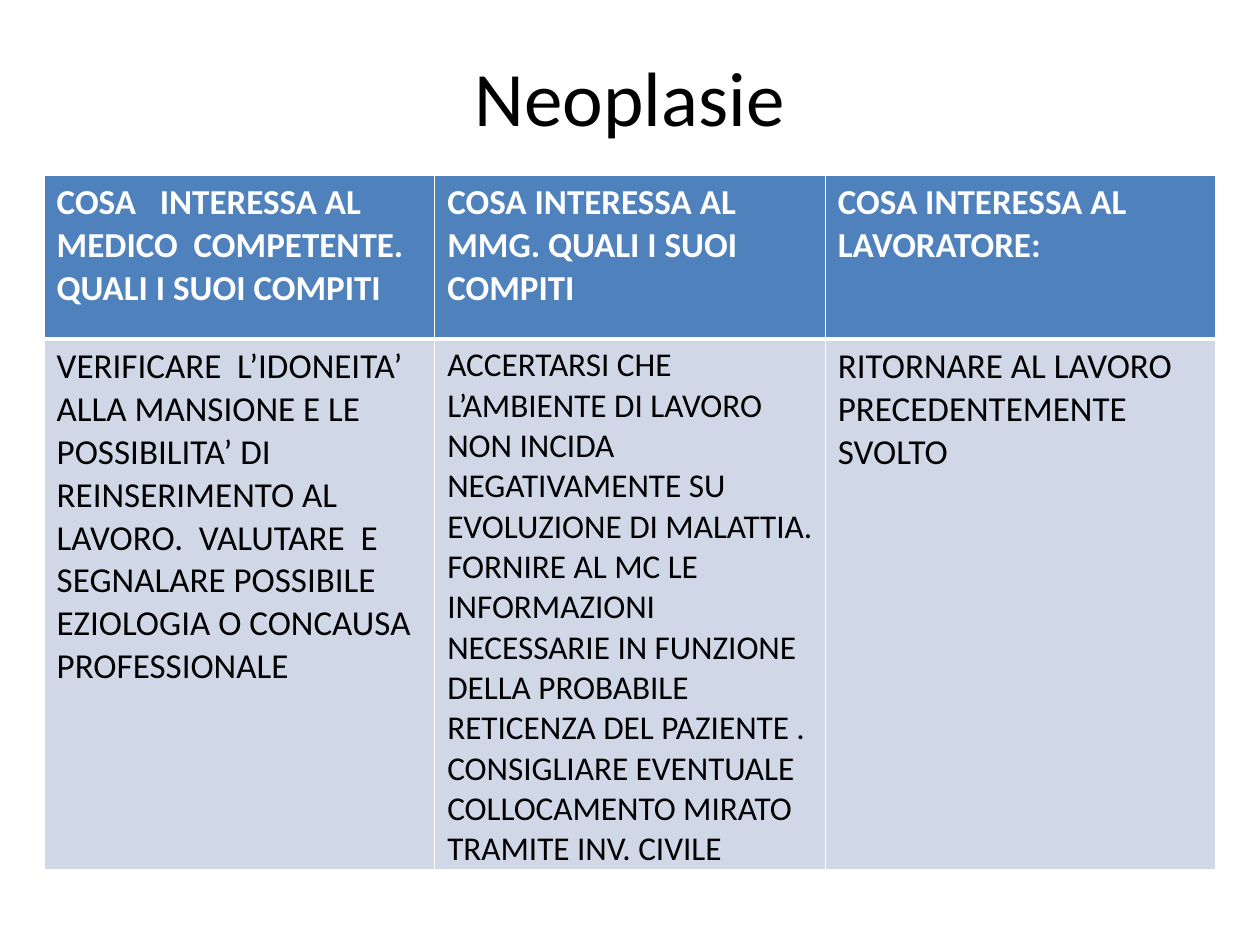
from dataclasses import dataclass

from lxml import etree
from pptx import Presentation
from pptx.dml.color import RGBColor
from pptx.enum import text
from pptx.oxml import ns
from pptx.util import Inches, Pt

BLACK = RGBColor(0x00, 0x00, 0x00)
WHITE = RGBColor(0xFF, 0xFF, 0xFF)
BLUE = RGBColor(0x4F, 0x81, 0xBD)
PALE_BLUE = RGBColor(0xD0, 0xD8, 0xE8)
FONT = "Calibri"


@dataclass(frozen=True)
class RowStyle:
    height: float
    fill: RGBColor
    color: RGBColor
    bold: bool
    top: float
    bottom: float


@dataclass(frozen=True)
class Column:
    heading: str
    body: str
    body_size: float = 20


HEADER = RowStyle(1.3, BLUE, WHITE, True, top=1, bottom=3)
BODY = RowStyle(4.14, PALE_BLUE, BLACK, False, top=3, bottom=1)
HEADING_SIZE = 20
COLUMN_WIDTH = 3.1

COLUMNS = [
    Column(
        "COSA   INTERESSA AL MEDICO  COMPETENTE. QUALI I SUOI COMPITI",
        "VERIFICARE  L’IDONEITA’ ALLA MANSIONE E LE POSSIBILITA’ DI "
        "REINSERIMENTO AL LAVORO.  VALUTARE  E SEGNALARE POSSIBILE "
        "EZIOLOGIA O CONCAUSA PROFESSIONALE",
    ),
    Column(
        "COSA INTERESSA AL MMG. QUALI I SUOI COMPITI",
        "ACCERTARSI CHE L’AMBIENTE DI LAVORO NON INCIDA NEGATIVAMENTE SU "
        "EVOLUZIONE DI MALATTIA. FORNIRE AL MC LE INFORMAZIONI NECESSARIE "
        "IN FUNZIONE DELLA PROBABILE RETICENZA DEL PAZIENTE . CONSIGLIARE "
        "EVENTUALE COLLOCAMENTO MIRATO TRAMITE INV. CIVILE",
        body_size=19,
    ),
    Column(
        "COSA INTERESSA AL LAVORATORE:",
        "RITORNARE AL LAVORO PRECEDENTEMENTE SVOLTO",
    ),
]


def format_text(p, size: float, color: RGBColor, bold: bool = False) -> None:
    for r in p.runs:
        r.font.name = FONT
        r.font.size = Pt(size)
        r.font.bold = bold
        r.font.color.rgb = color


def add_border(cell, side: str, width: float) -> None:
    tc_pr = cell._tc.get_or_add_tcPr()
    ln = etree.SubElement(tc_pr, ns.qn(f"a:ln{side}"), w=str(Pt(width)))
    fill = etree.SubElement(ln, ns.qn("a:solidFill"))
    etree.SubElement(fill, ns.qn("a:srgbClr"), val=str(WHITE))


def fill_cell(cell, content: str, size: float, style: RowStyle) -> None:
    cell.text_frame.text = content
    format_text(cell.text_frame.paragraphs[0], size, style.color, style.bold)
    borders = {"L": 1, "R": 1, "T": style.top, "B": style.bottom}
    for side, width in borders.items():
        add_border(cell, side, width)
    cell.fill.solid()
    cell.fill.fore_color.rgb = style.fill


def add_title(s, title: str) -> None:
    sp = s.shapes.add_textbox(Inches(0.51), Inches(0.29), Inches(8.98), Inches(0.94))
    tf = sp.text_frame
    tf.word_wrap = True
    tf.vertical_anchor = text.MSO_ANCHOR.MIDDLE
    tf.text = title
    p = tf.paragraphs[0]
    p.alignment = text.PP_ALIGN.CENTER
    format_text(p, 44, BLACK)


def add_task_table(s, columns: list[Column]) -> None:
    styles = (HEADER, BODY)
    table = s.shapes.add_table(
        len(styles), len(columns), Inches(0.35), Inches(1.39),
        Inches(COLUMN_WIDTH * len(columns)), Inches(sum(st.height for st in styles)),
    ).table
    for row, style in zip(table.rows, styles):
        row.height = Inches(style.height)
    for i, column in enumerate(columns):
        table.columns[i].width = Inches(COLUMN_WIDTH)
        fill_cell(table.cell(0, i), column.heading, HEADING_SIZE, HEADER)
        fill_cell(table.cell(1, i), column.body, column.body_size, BODY)


def main() -> None:
    prs = Presentation()
    prs.slide_width = Inches(10)
    prs.slide_height = Inches(7.5)
    s = prs.slides.add_slide(prs.slide_layouts[6])
    add_title(s, "Neoplasie")
    add_task_table(s, COLUMNS)
    prs.save("out.pptx")


if __name__ == "__main__":
    main()
